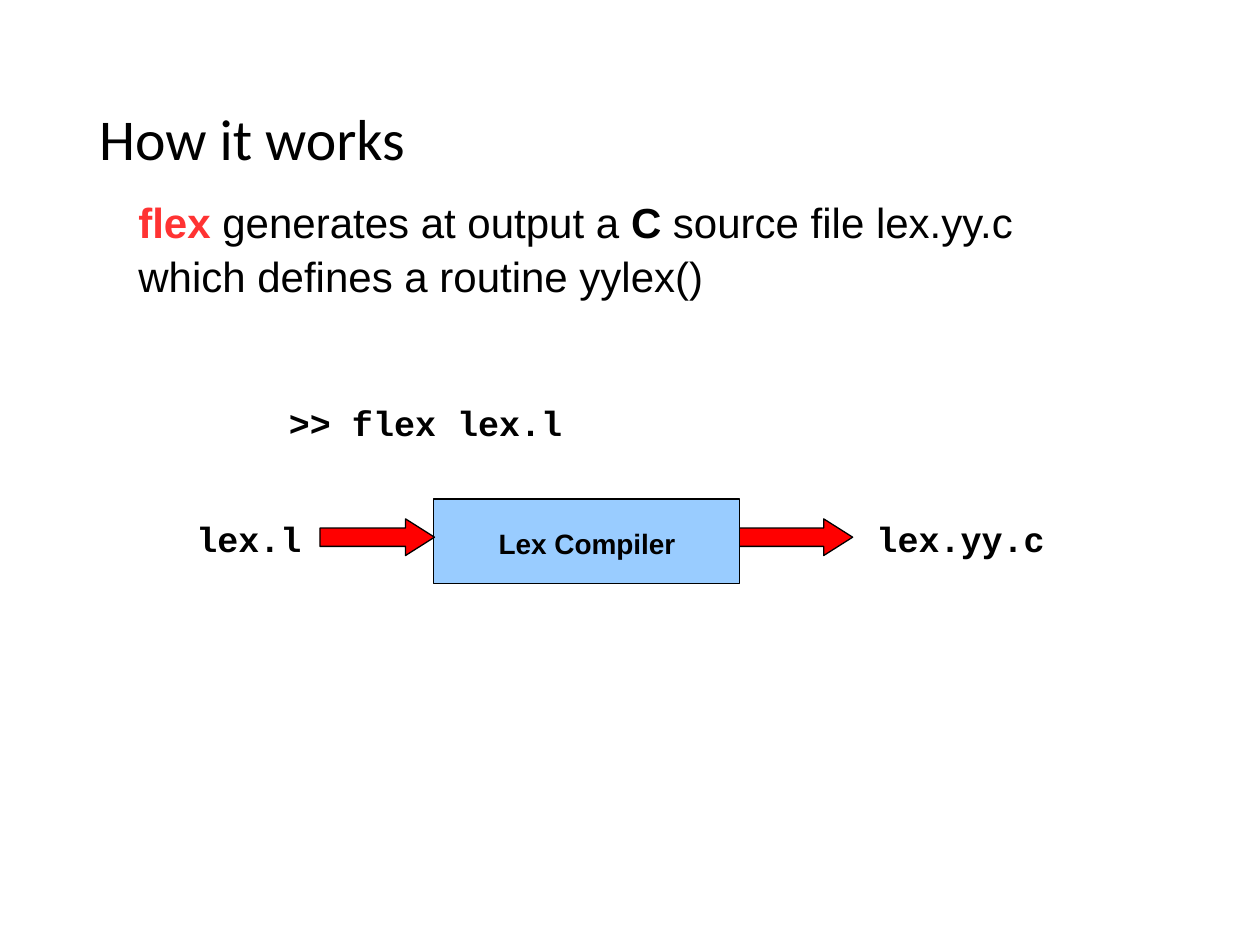
import pptx
import pptx.dml.color
import pptx.enum.shapes
import pptx.enum.text
import pptx.util

Cm = pptx.util.Cm
Pt = pptx.util.Pt
RGBColor = pptx.dml.color.RGBColor
MSO_SHAPE = pptx.enum.shapes.MSO_SHAPE
PP_ALIGN = pptx.enum.text.PP_ALIGN
MSO_ANCHOR = pptx.enum.text.MSO_ANCHOR

BLACK = RGBColor(0x00, 0x00, 0x00)
KEYWORD_RED = RGBColor(0xFF, 0x33, 0x33)
ARROW_RED = RGBColor(0xFF, 0x00, 0x00)
COMPILER_BLUE = RGBColor(0x99, 0xCC, 0xFF)

TITLE = {"name": "Calibri", "size": Pt(33), "bold": False}
BODY = {"name": "Arial", "size": Pt(24), "bold": False}
STRONG = {**BODY, "bold": True}
LABEL = {"name": "Arial", "size": Pt(16), "bold": True}
CODE = {"name": "Courier New", "size": Pt(20), "bold": True}
CODE_INDENT = {**CODE, "name": "Arial"}


def set_format(target, values):
    for attribute, value in values.items():
        setattr(target, attribute, value)


def add_text(slide, box, runs, paragraph_format, anchor=MSO_ANCHOR.TOP):
    frame = slide.shapes.add_textbox(*map(Cm, box)).text_frame
    set_format(frame, {"word_wrap": True, "vertical_anchor": anchor})
    paragraph = frame.paragraphs[0]
    set_format(paragraph, paragraph_format)
    for words, font_format, color in runs:
        run = paragraph.add_run()
        run.text = words
        set_format(run.font, font_format)
        run.font.color.rgb = color


def add_block(slide, preset, box, color):
    block = slide.shapes.add_shape(preset, *map(Cm, box))
    block.shadow.inherit = False
    block.fill.solid()
    block.fill.fore_color.rgb = color
    block.line.color.rgb = BLACK
    block.line.width = Pt(0.75)
    return block


def add_flow_arrow(slide, left):
    arrow = add_block(slide, MSO_SHAPE.RIGHT_ARROW, (left, 10.46, 2.31, 0.74), ARROW_RED)
    arrow.adjustments[0] = 0.5
    arrow.adjustments[1] = 0.79


def main():
    deck = pptx.Presentation()
    set_format(deck, {"slide_width": Cm(25.4), "slide_height": Cm(19.05)})
    slide = deck.slides.add_slide(deck.slide_layouts[6])

    add_text(slide, (1.75, 1.02, 21.9, 3.68), [("How it works", TITLE, BLACK)],
             {"line_spacing": 0.9}, MSO_ANCHOR.MIDDLE)
    add_flow_arrow(slide, 14.88)
    add_text(slide, (2.54, 3.78, 19.69, 2.31), [
        ("flex", STRONG, KEYWORD_RED),
        (" generates at output a ", BODY, BLACK),
        ("C", STRONG, BLACK),
        (" source file lex.yy.c which defines a routine yylex()", BODY, BLACK),
    ], {"space_before": Pt(20), "line_spacing": 1.06})

    add_block(slide, MSO_SHAPE.RECTANGLE, (8.74, 10.06, 6.17, 1.7), COMPILER_BLUE)
    add_text(slide, (9.7, 10.44, 4.27, 0.94), [("Lex Compiler", LABEL, BLACK)],
             {"alignment": PP_ALIGN.CENTER, "space_before": Pt(10), "line_spacing": 1.06})

    code_lines = [
        ((17.42, 10.26, 4.06, 1.12), [("lex.yy.c", CODE, BLACK)], 12.5),
        ((3.71, 10.26, 3.61, 1.12), [("lex.l", CODE, BLACK)], 5),
        ((5.38, 7.92, 6.35, 1.12),
         [(" ", CODE_INDENT, BLACK), (">> flex lex.l", CODE, BLACK)], 12.5),
    ]
    for box, runs, space in code_lines:
        add_text(slide, box, runs, {"space_before": Pt(space), "line_spacing": 1.06})
    add_flow_arrow(slide, 6.45)

    deck.save("out.pptx")


if __name__ == "__main__":
    main()
